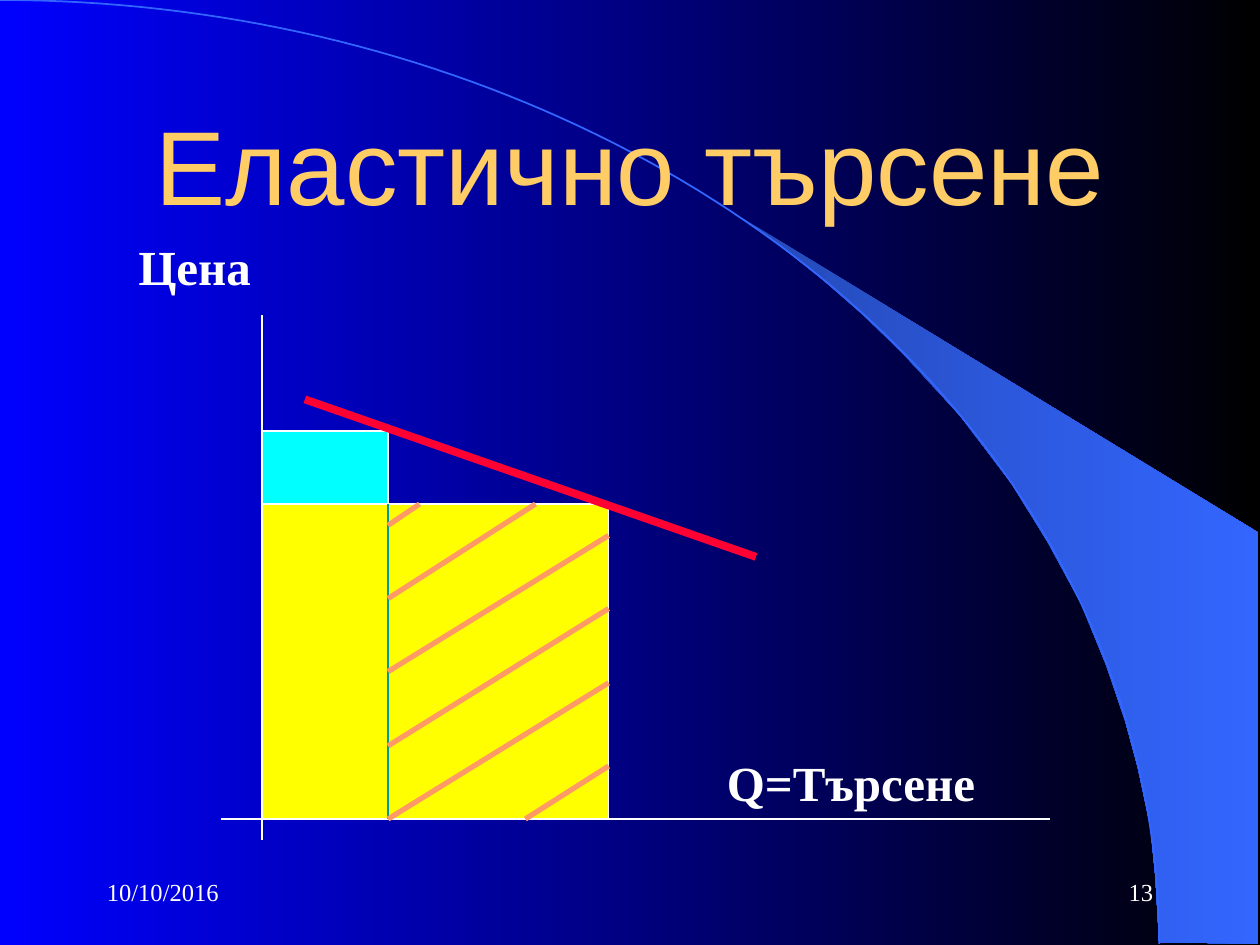
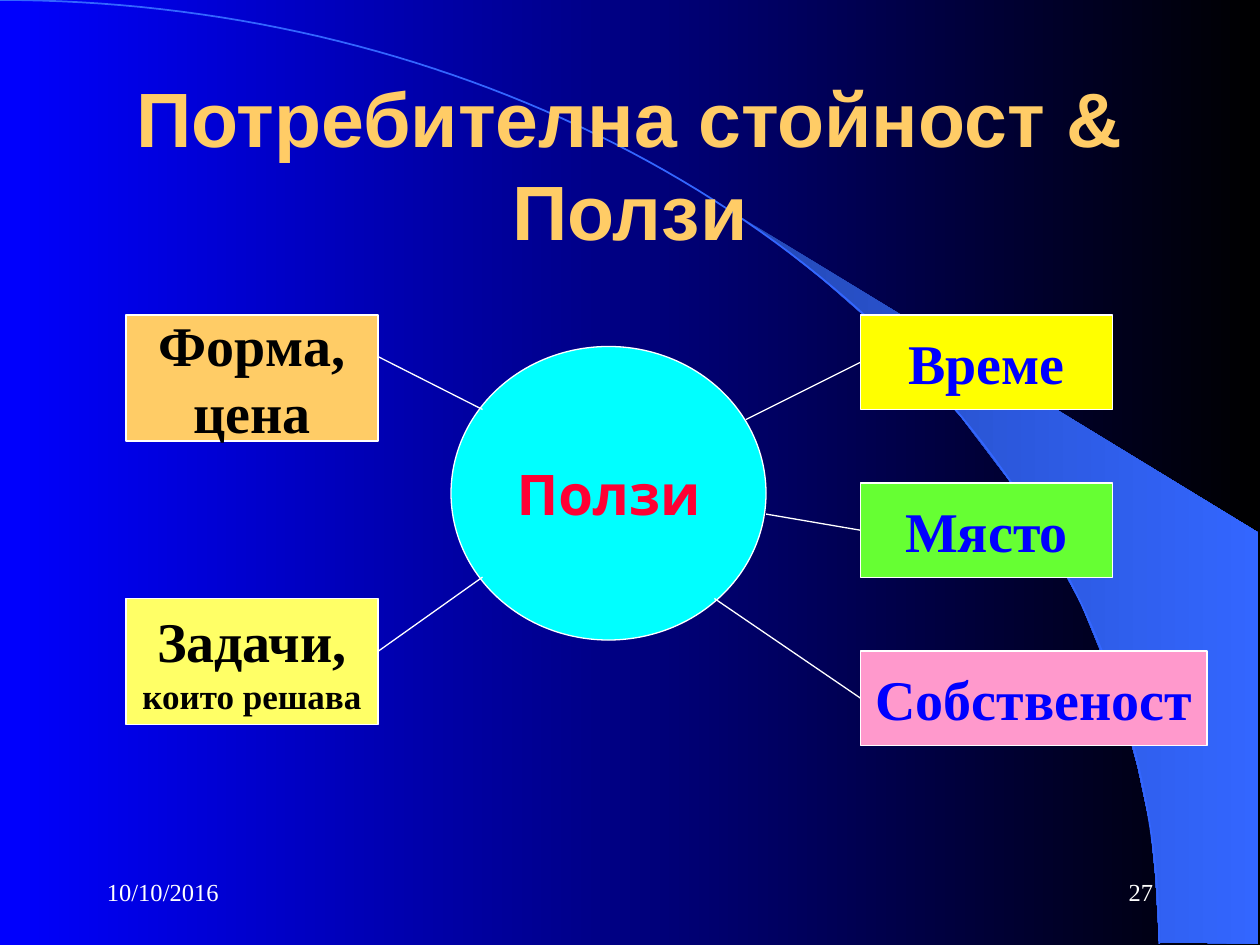
from math import cos, pi, sin

from lxml import etree
from pptx import Presentation
from pptx.dml.color import RGBColor
from pptx.enum.shapes import MSO_CONNECTOR, MSO_SHAPE
from pptx.enum.text import MSO_ANCHOR, PP_ALIGN
from pptx.oxml.ns import qn
from pptx.util import Inches, Pt

STRAIGHT = MSO_CONNECTOR.STRAIGHT
RECTANGLE, OVAL = MSO_SHAPE.RECTANGLE, MSO_SHAPE.OVAL
TOP, MIDDLE = MSO_ANCHOR.TOP, MSO_ANCHOR.MIDDLE
LEFT, CENTER, RIGHT = PP_ALIGN.LEFT, PP_ALIGN.CENTER, PP_ALIGN.RIGHT
color = RGBColor.from_string

WHITE, BLACK, BLUE, RED = "FFFFFF", "000000", "0000FF", "FF0033"
GOLD, CYAN, YELLOW = "FFCC66", "00FFFF", "FFFF00"
SWOOSH_DARK, SWOOSH_LIGHT = "2449B6", "3366FF"
DIVIDER, HATCH = "009999", "FF9966"
SERIF, SANS, ROUND = "Times New Roman", "Arial", "Cabin"
SIDE_LEFT = 1

SWOOSH = [
    (9.2, 7.48), (9.99, 7.49), (9.99, 4.23), (5.89, 1.73), (6.24, 1.99), (6.53, 2.22),
    (6.85, 2.5), (7.16, 2.8), (7.62, 3.3), (8.03, 3.84), (8.32, 4.31), (8.58, 4.79),
    (8.78, 5.28), (8.93, 5.72), (9.03, 6.09), (9.13, 6.56), (9.17, 6.96),
]
ARC_WIDTH, ARC_HEIGHT, ARC_STEPS = 9.2, 7.49, 90
ARC = [
    (ARC_WIDTH * sin(pi / 2 * step / ARC_STEPS), ARC_HEIGHT * (1 - cos(pi / 2 * step / ARC_STEPS)))
    for step in range(ARC_STEPS + 1)
]


def add_text(slide, box, lines, hue, font=SERIF, bold=True, align=CENTER,
             anchor=MIDDLE, kind=None, fill=None):
    """Add (text, size) lines in a text box, or in a filled, outlined shape of the given kind."""
    bounds = [Inches(value) for value in box]
    if kind is None:
        shape = slide.shapes.add_textbox(*bounds)
    else:
        shape = slide.shapes.add_shape(kind, *bounds)
        shape.shadow.inherit = False
        shape.fill.solid()
        shape.fill.fore_color.rgb = color(fill)
        shape.line.color.rgb = color(WHITE)
        shape.line.width = Pt(0.75)
    frame = shape.text_frame
    frame.word_wrap = kind is None
    frame.vertical_anchor = anchor
    for index, (text, size) in enumerate(lines):
        paragraph = frame.add_paragraph() if index else frame.paragraphs[0]
        paragraph.text = text
        paragraph.alignment = align
        paragraph.font.name = font
        paragraph.font.size = Pt(size)
        paragraph.font.bold = bold
        paragraph.font.color.rgb = color(hue)
    return shape


def add_line(slide, start, end, hue=WHITE, width=0.75):
    points = [Inches(value) for value in (*start, *end)]
    connector = slide.shapes.add_connector(STRAIGHT, *points)
    connector.line.color.rgb = color(hue)
    connector.line.width = Pt(width)
    etree.SubElement(connector._element.spPr, qn("a:effectLst"))
    return connector


presentation = Presentation()
presentation.slide_width = Inches(10)
presentation.slide_height = Inches(7.5)
blank_layout = presentation.slide_layouts[6]

# Shared background, swoosh, footer and title
slides = []
for title, size, bold, number in [
    ("Еластично търсене", 60, False, "13"),
    ("Потребителна стойност & Ползи", 44, True, "27"),
]:
    slide = presentation.slides.add_slide(blank_layout)
    slides.append(slide)
    outlines = []
    for points, closed in [(SWOOSH, True), (ARC, False)]:
        corners = [(Inches(x), Inches(y)) for x, y in points]
        builder = slide.shapes.build_freeform(*corners[0])
        builder.add_line_segments(corners[1:], close=closed)
        outline = builder.convert_to_shape()
        outline.shadow.inherit = False
        outlines.append(outline)
    swoosh, arc = outlines
    swoosh.line.fill.background()
    arc.fill.background()
    arc.line.color.rgb = color(SWOOSH_LIGHT)
    arc.line.width = Pt(1)
    for fill, hues in [(slide.background.fill, (BLUE, BLACK)),
                       (swoosh.fill, (SWOOSH_DARK, SWOOSH_LIGHT))]:
        fill.gradient()
        fill.gradient_angle = 0
        for stop, hue in zip(fill.gradient_stops, hues):
            stop.color.rgb = color(hue)

    for left, text, align in [(0.75, "10/10/2016", LEFT), (7.17, number, RIGHT)]:
        add_text(slide, (left, 6.83, 2.08, 0.5), [(text, 14)], WHITE, bold=False, align=align)
    add_text(slide, (0.75, 0.67, 8.5, 1.25), [(title, size)], GOLD, font=SANS, bold=bold)

demand_slide, benefits_slide = slides

# Elastic demand: axes, revenue rectangles, demand line
AXIS_X, AXIS_Y = 2.08, 6.5
OLD_QUANTITY, NEW_QUANTITY = 3.08, 4.83
OLD_PRICE, NEW_PRICE = 3.42, 4

add_line(demand_slide, (AXIS_X, 2.5), (AXIS_X, 6.67))
add_line(demand_slide, (1.75, AXIS_Y), (8.33, AXIS_Y))
for quantity, price, fill in [(OLD_QUANTITY, OLD_PRICE, CYAN), (NEW_QUANTITY, NEW_PRICE, YELLOW)]:
    add_text(demand_slide, (AXIS_X, price, quantity - AXIS_X, AXIS_Y - price), [], WHITE,
             kind=RECTANGLE, fill=fill)
add_line(demand_slide, (2.42, 3.17), (6, 4.42), RED, 4.5)
add_line(demand_slide, (OLD_QUANTITY, NEW_PRICE), (OLD_QUANTITY, AXIS_Y), DIVIDER)
for box, text in [((1, 1.83, 1.25, 0.57), "Цена"), ((5.67, 5.92, 3.58, 0.57), "Q=Търсене")]:
    add_text(demand_slide, box, [(text, 28)], WHITE, align=LEFT, anchor=TOP)

for start, end in [
    ((OLD_QUANTITY, 4.17), (3.33, NEW_PRICE)),
    ((OLD_QUANTITY, 4.75), (4.25, NEW_PRICE)),
    ((OLD_QUANTITY, 5.33), (NEW_QUANTITY, 4.25)),
    ((OLD_QUANTITY, 5.92), (NEW_QUANTITY, 4.83)),
    ((OLD_QUANTITY, AXIS_Y), (NEW_QUANTITY, 5.42)),
    ((4.17, AXIS_Y), (NEW_QUANTITY, 6.08)),
]:
    add_line(demand_slide, start, end, HATCH, 3)

# Benefits: central circle with causes on the left and kinds on the right
add_text(benefits_slide, (3.58, 2.75, 2.5, 2.33), [("Ползи", 32)], RED, font=ROUND,
         kind=OVAL, fill=CYAN)

for top, lines, fill, line_y, circle_point in [
    (2.5, [("Форма,", 32), ("цена", 32)], GOLD, 2.83, (3.83, 3.25)),
    (4.75, [("Задачи,", 32), ("които решава", 20)], "FFFF66", 5.17, (3.83, 4.58)),
]:
    add_text(benefits_slide, (1, top, 2, 1), lines, BLACK, kind=RECTANGLE, fill=fill)
    add_line(benefits_slide, (3, line_y), circle_point)

BENEFIT_LEFT, BENEFIT_TOP, BENEFIT_PITCH, BENEFIT_HEIGHT = 6.83, 2.5, 4 / 3, 0.75
for row, (text, width, fill, circle_point) in enumerate([
    ("Време", 2, YELLOW, (5.92, 3.33)),
    ("Място", 2, "66FF33", (6.08, 4.08)),
    ("Собственост", 2.75, "FF99CC", (5.67, 4.75)),
]):
    top = BENEFIT_TOP + row * BENEFIT_PITCH
    benefit = add_text(benefits_slide, (BENEFIT_LEFT, top, width, BENEFIT_HEIGHT), [(text, 32)],
                       BLUE, kind=RECTANGLE, fill=fill)
    connector = add_line(benefits_slide, circle_point, (BENEFIT_LEFT, top + BENEFIT_HEIGHT / 2))
    connector.end_connect(benefit, SIDE_LEFT)

presentation.save("out.pptx")
